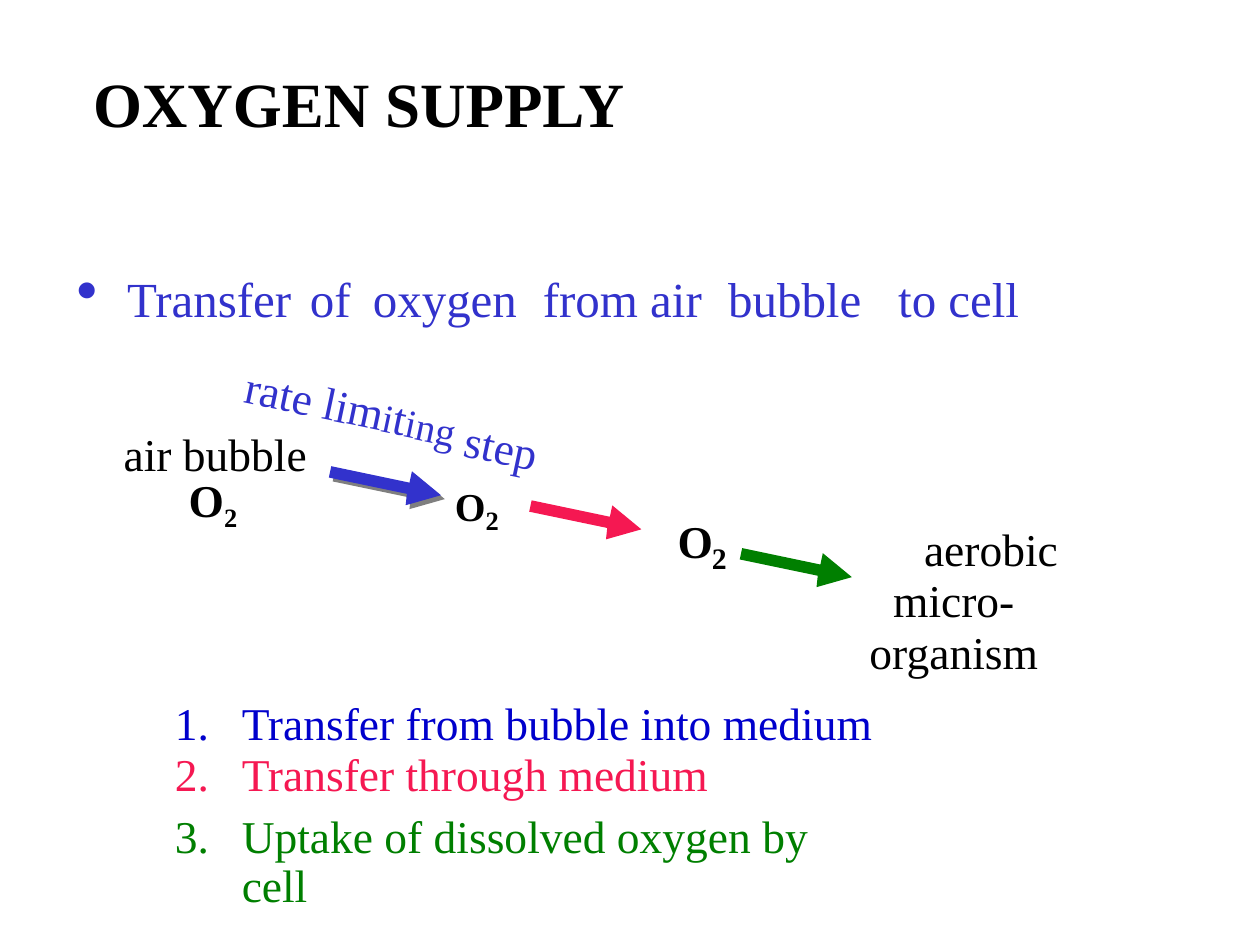
"""Build the oxygen supply slide."""
from lxml.etree import SubElement
from pptx import Presentation
from pptx.dml.color import RGBColor
from pptx.enum.text import PP_ALIGN
from pptx.oxml.ns import qn
from pptx.util import Pt

BLACK = RGBColor(0x00, 0x00, 0x00)
GREY = RGBColor(0x7F, 0x7F, 0x7F)
INDIGO = RGBColor(0x32, 0x32, 0xCC)
BLUE = RGBColor(0x00, 0x00, 0xCC)
RED = RGBColor(0xF5, 0x18, 0x52)
GREEN = RGBColor(0x00, 0x7F, 0x00)

deck = Presentation()
deck.slide_width, deck.slide_height = Pt(720), Pt(540)
slide = deck.slides.add_slide(deck.slide_layouts[6])


def add_text(place, paragraphs, size=26, color=BLACK, bold=False, inset=1.4, turn=0):
    box = slide.shapes.add_textbox(*map(Pt, place))
    box.rotation = turn
    frame = box.text_frame
    insets = {"margin_left": Pt(inset), "margin_top": 0, "margin_right": 0, "margin_bottom": 0}
    for name, value in {**insets, "word_wrap": True}.items():
        setattr(frame, name, value)
    lines = []
    for index, (runs, layout) in enumerate(paragraphs):
        line = frame.add_paragraph() if index else frame.paragraphs[0]
        for name, value in layout.items():
            setattr(line, name, value)
        for text, style, baseline in runs:
            run = line.add_run()
            run.text = text
            look = {"name": "Times New Roman", "size": Pt(size), "bold": bold, **style}
            run.font.color.rgb = look.pop("color", color)
            for name, value in look.items():
                setattr(run.font, name, value)
            if baseline:
                run.font._element.set("baseline", str(baseline * 1000))
        lines.append(line)
    return lines


def set_indents(line, left=0, right=0, first=0, marks=()):
    properties = line._p.get_or_add_pPr()
    for name, value in {"marL": left, "marR": right, "indent": first}.items():
        properties.set(name, str(Pt(value)))
    for tag, attribute, value in marks:
        SubElement(properties, qn(tag)).set(attribute, value)


arrow_outline = [(1.4, 0), (0, 6.5), (44.6, 15.8), (43.9, 22.3), (64.1, 16.6), (47.5, 2.9), (46.1, 9.4)]
for left, top, color in [
    (190.1, 268.6, GREY),
    (187.9, 266.4, INDIGO),
    (302.4, 285.9, RED),
    (422.7, 313.2, GREEN),
]:
    points = [(Pt(left + x), Pt(top + y)) for x, y in arrow_outline]
    builder = slide.shapes.build_freeform(*points[0])
    builder.add_line_segments(points[1:], close=True)
    arrow = builder.convert_to_shape()
    arrow.shadow.inherit = False
    arrow.fill.solid()
    arrow.fill.fore_color.rgb = color
    arrow.line.fill.background()

title_layout = {"line_spacing": Pt(49.8), "space_before": Pt(2.5)}
add_text((51.8, 30.2, 391, 51.1), [([("OXYGEN SUPPLY", {}, 0)], title_layout)], 36, bold=True)

headline_layout = {"line_spacing": Pt(36.5), "space_before": Pt(1.8)}
for words, left, width, hang in [
    ("Transfer", 42.5, 151.2, 28.8),
    ("of", 175.7, 35.3, 0),
    ("oxygen", 211.7, 107.3, 0),
    ("from air", 308.9, 117.4, 0),
    ("bubble", 414.7, 99.4, 0),
    ("to cell", 511.9, 90.7, 0),
]:
    headline = add_text((left, 150.5, width, 38.2), [([(words, {}, 0)], headline_layout)], 28, INDIGO)
    if hang:
        bullet = [("a:buSzPct", "val", "125000"), ("a:buChar", "char", "•")]
        set_indents(headline[0], hang, 0, -hang, bullet)

label = {"line_spacing": Pt(27.6), "space_before": Pt(1.4)}
centred_label = {**label, "alignment": PP_ALIGN.CENTER}

bubble_oxygen = [("O", {"bold": True}, 0), ("2", {"bold": True}, -22)]
air_bubble = add_text((69.8, 247, 106.6, 66.2), [
    ([("air bubble", {}, 0)], centred_label),
    (bubble_oxygen, {"alignment": PP_ALIGN.CENTER, "line_spacing": Pt(29.9)}),
], inset=0)
set_indents(air_bubble[1], 35.3, 38.2)

medium_oxygen = [("O", {"size": Pt(39)}, 8), ("2", {}, -9)]
medium_layout = {"line_spacing": Pt(32.2), "space_before": Pt(1.6)}
add_text((258.5, 276.5, 34.6, 33.8), [(medium_oxygen, medium_layout)], bold=True)

add_text((385.9, 296.6, 25.9, 28.8), [([("O", {}, 0)], label)], bold=True)
subscript_layout = {"line_spacing": Pt(18.7), "space_before": Pt(0.9)}
add_text((405.4, 310.3, 13, 20.2), [([("2", {}, 0)], subscript_layout)], 17, bold=True)

organism = add_text((484.6, 301, 166.3, 61.2), [
    ([("aerobic", {}, 0)], centred_label),
    ([("micro-organism", {}, 0)], {"alignment": PP_ALIGN.CENTER, "line_spacing": 0.96}),
], inset=0)
for line, left in zip(organism, (42.5, 0)):
    set_indents(line, left, 45.4)

steps = add_text((98.6, 401, 403.2, 93.6), [
    ([("Transfer from bubble into medium", {"color": BLUE}, 0)], label),
    ([("Transfer through medium", {"color": RED}, 0)], {"line_spacing": 0.96}),
    ([("Uptake of dissolved oxygen by cell", {"color": GREEN}, 0)],
     {"line_spacing": Pt(27.6), "space_before": Pt(7)}),
])
for step in steps:
    set_indents(step, 38.2, 0, -38.2, [("a:buAutoNum", "type", "arabicPeriod")])

slanted = {"line_spacing": Pt(26), "space_before": Pt(1.3)}
rate_limiting = [
    ("rate lim", {}, 0),
    ("i", {"size": Pt(39)}, -1),
    ("t", {}, 0),
    ("ing", {"size": Pt(39)}, -1),
]
add_text((138.2, 225.4, 131.8, 26.6), [(rate_limiting, slanted)], color=INDIGO, inset=0, turn=12)
add_text((265, 245.5, 52.6, 26.6), [([("step", {}, 0)], slanted)], color=INDIGO, inset=0, turn=12)

deck.save("out.pptx")
